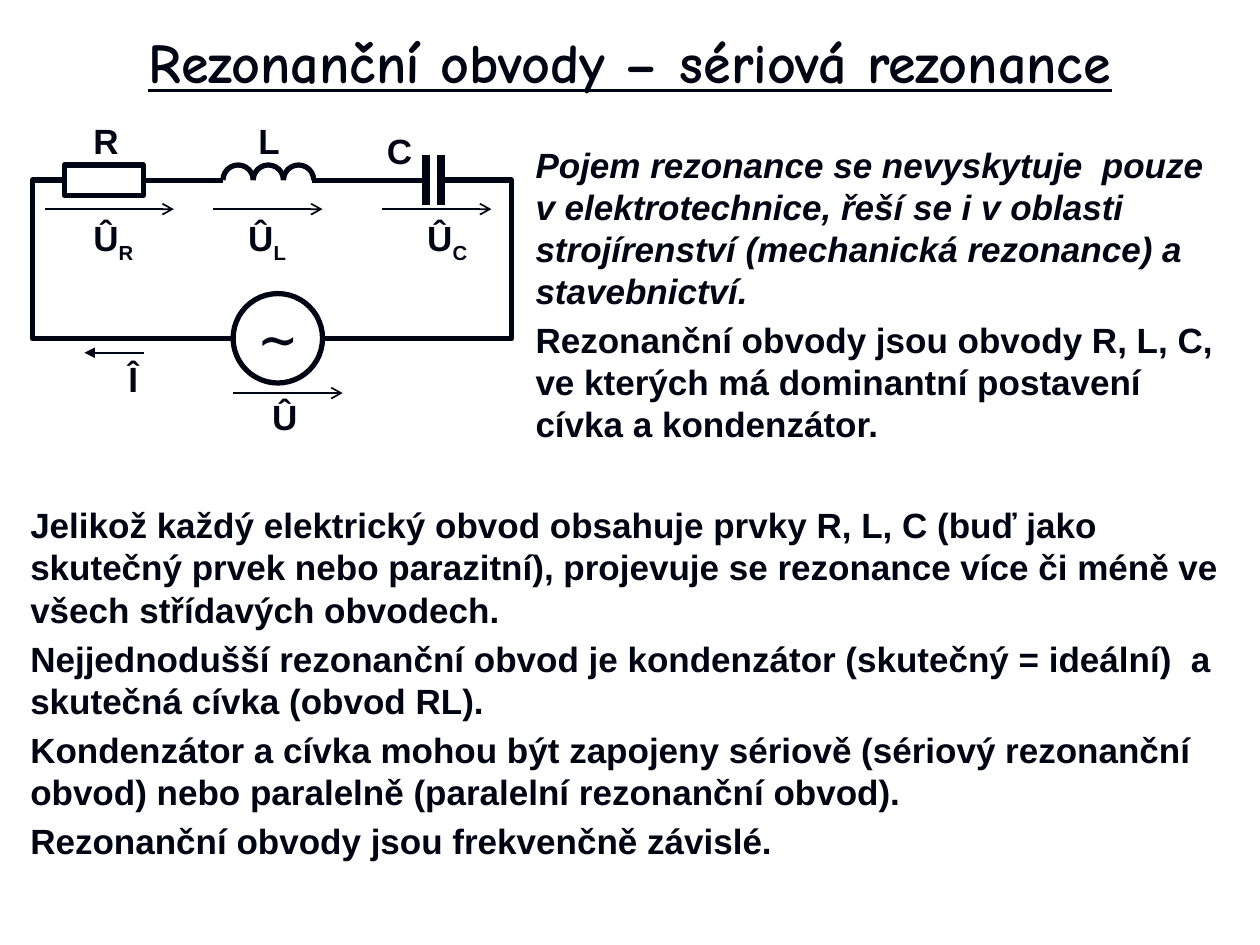
"""Builds a slide on series resonance with an RLC circuit diagram."""
from lxml.etree import SubElement
from pptx import Presentation
from pptx.dml.color import RGBColor
from pptx.enum.shapes import MSO_CONNECTOR, MSO_SHAPE
from pptx.enum.text import MSO_ANCHOR, PP_ALIGN
from pptx.oxml.ns import qn
from pptx.util import Inches, Pt

COLORS = {"ink": "000514", "paper": "FFFFFF"}
INK = RGBColor.from_string(COLORS["ink"])


def add_wire(start, end, width, arrow=None, kind=MSO_CONNECTOR.STRAIGHT):
    """Draw a connector between two points, with an optional arrowhead."""
    wire = slide.shapes.add_connector(kind, *map(Inches, start + end))
    wire.line.color.rgb = INK
    wire.line.width = Pt(width)
    if arrow:
        SubElement(wire.line._get_or_add_ln(), qn("a:tailEnd"), type=arrow, w="med", len="med")
    SubElement(wire._element.spPr, qn("a:effectLst"))
    return wire


def add_text(box, paragraphs, wrap):
    """Write paragraphs of (text, subscript, italic) in a text box."""
    frame = slide.shapes.add_textbox(*map(Inches, box)).text_frame
    frame.word_wrap = wrap
    frame.margin_left = frame.margin_right = Inches(0.04)
    frame.margin_top = frame.margin_bottom = Inches(0.04)
    for index, (text, subscript, italic) in enumerate(paragraphs):
        paragraph = frame.add_paragraph() if index else frame.paragraphs[0]
        paragraph.space_before = Pt(4 if index else 0)
        paragraph.font.name, paragraph.font.size = "Arial", Pt(20)
        paragraph.font.bold, paragraph.font.italic = True, italic
        paragraph.font.color.rgb = INK
        paragraph.add_run().text = text
        if subscript:
            lowered = paragraph.add_run()
            lowered.text = subscript
            lowered.font._element.set("baseline", "-25000")


presentation = Presentation()
presentation.slide_width, presentation.slide_height = Inches(10), Inches(7.5)
slide = presentation.slides.add_slide(presentation.slide_layouts[5])
slide.background.fill.solid()
slide.background.fill.fore_color.rgb = RGBColor.from_string(COLORS["paper"])

title = slide.shapes.title
title.left, title.top, title.width, title.height = map(Inches, (0.12, 0.13, 9.76, 0.71))
title.text_frame.text = "Rezonanční obvody – sériová rezonance"
title.text_frame.vertical_anchor = MSO_ANCHOR.MIDDLE
heading = title.text_frame.paragraphs[0]
heading.alignment = PP_ALIGN.CENTER
heading.font.name, heading.font.size = "Comic Neue", Pt(32)
heading.font.bold = heading.font.underline = True
heading.font.color.rgb = INK

add_text((4.21, 1.1, 5.59, 2.48), [
    ("Pojem rezonance se nevyskytuje  pouze v elektrotechnice, řeší se i v oblasti "
     "strojírenství (mechanická rezonance) a stavebnictví.", "", True),
    ("Rezonanční obvody jsou obvody R, L, C, ve kterých má dominantní postavení "
     "cívka a kondenzátor.", "", False),
], True)
add_text((0.2, 3.96, 9.61, 2.97), [
    ("Jelikož každý elektrický obvod obsahuje prvky R, L, C (buď jako skutečný prvek "
     "nebo parazitní), projevuje se rezonance více či méně ve všech střídavých "
     "obvodech.", "", False),
    ("Nejjednodušší rezonanční obvod je kondenzátor (skutečný = ideální)  a skutečná "
     "cívka (obvod RL).", "", False),
    ("Kondenzátor a cívka mohou být zapojeny sériově (sériový rezonanční obvod) nebo "
     "paralelně (paralelní rezonanční obvod).", "", False),
    ("Rezonanční obvody jsou frekvenčně závislé.", "", False),
], True)

source = slide.shapes.add_shape(MSO_SHAPE.OVAL, *map(Inches, (1.85, 2.33, 0.71, 0.71)))
resistor = slide.shapes.add_shape(MSO_SHAPE.RECTANGLE, *map(Inches, (0.51, 1.31, 0.63, 0.24)))
coil = []
for turn in range(3):
    arc = slide.shapes.add_shape(
        MSO_SHAPE.ARC, *map(Inches, (1.77 + 0.24 * turn, 1.31, 0.24, 0.24)))
    arc.adjustments[0], arc.adjustments[1] = 108, 0
    coil.append(arc)
outline = slide.shapes.build_freeform(Inches(3.5), Inches(1.43), scale=1.0)
outline.add_line_segments(
    [(Inches(x), Inches(y)) for x, y in ((4.06, 1.43), (4.06, 2.69), (2.56, 2.69))], close=False)
right_wire = outline.convert_to_shape()
for part in (source, resistor, *coil, right_wire):
    part.shadow.inherit = False
    part.fill.background()
    part.line.color.rgb = INK
    part.line.width = Pt(3)

source.text_frame.word_wrap = False
source.text_frame.vertical_anchor = MSO_ANCHOR.MIDDLE
wave = source.text_frame.paragraphs[0]
wave.text = "∼"
wave.alignment = PP_ALIGN.CENTER
wave.font.name, wave.font.size, wave.font.bold = "Times New Roman", Pt(28), True
wave.font.color.rgb = INK

left_wire = add_wire((1.83, 2.69), (0.49, 1.43), 3, kind=MSO_CONNECTOR.ELBOW)
bend = left_wire._element.spPr.find(qn("a:prstGeom")).get_or_add_avLst()
SubElement(bend, qn("a:gd"), name="adj1", fmla="val 117300")
for start_x, end_x in ((1.77, 1.14), (2.48, 3.35)):
    add_wire((start_x, 1.43), (end_x, 1.43), 3)
for plate_x in (3.38, 3.5):
    add_wire((plate_x, 1.23), (plate_x, 1.63), 5)
for start_x, end_x, y, head in (
    (0.36, 1.38, 1.66, "arrow"), (1.69, 2.56, 1.66, "arrow"), (3.03, 3.9, 1.66, "arrow"),
    (1.85, 2.72, 3.12, "arrow"), (1.14, 0.67, 2.8, "triangle"),
):
    add_wire((start_x, y), (end_x, y), 1, head)

for symbol, subscript, x, y, width in (
    ("R", "", 0.7, 0.91, 0.28), ("L", "", 2.01, 0.91, 0.25), ("C", "", 3.03, 0.99, 0.28),
    ("Û", "R", 0.7, 1.68, 0.42), ("Û", "L", 1.93, 1.68, 0.4), ("Û", "C", 3.35, 1.68, 0.42),
    ("Û", "", 2.12, 3.1, 0.28), ("Î", "", 0.98, 2.8, 0.16),
):
    add_text((x, y, width, 0.41), [(symbol, subscript, False)], False)

presentation.save("out.pptx")
